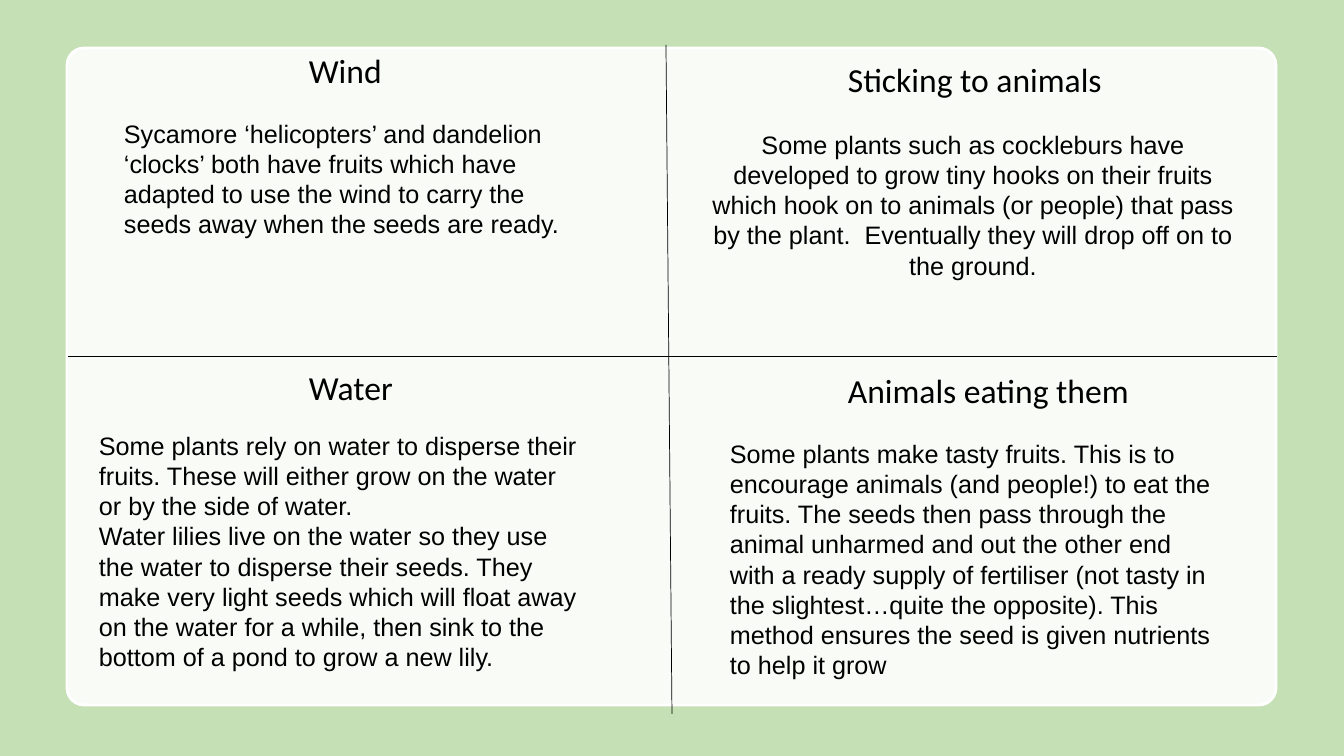
from lxml.etree import SubElement
from pptx import Presentation
from pptx.dml.color import RGBColor
from pptx.enum.shapes import MSO_CONNECTOR as Connector, MSO_SHAPE as Shape
from pptx.enum.text import MSO_AUTO_SIZE as AutoSize, PP_ALIGN as Align
from pptx.oxml.ns import qn
from pptx.util import Pt

HEADINGS = [
    ("Wind", (299, 45, 289, 50)),
    ("Sticking to animals", (838, 54, 439, 50)),
    ("Water", (299, 362, 184, 50)),
    ("Animals eating them", (838, 365, 337, 50)),
]
EXPLANATIONS = [
    (["Sycamore ‘helicopters’ and dandelion ‘clocks’ both have fruits which have adapted "
      "to use the wind to carry the seeds away when the seeds are ready."],
     (114, 113, 475, 132), Align.LEFT),
    (["Some plants such as cockleburs have developed to grow tiny hooks on their fruits "
      "which hook on to animals (or people) that pass by the plant.  Eventually they will "
      "drop off on to the ground."],
     (692, 124, 562, 163), Align.CENTER),
    (["Some plants rely on water to disperse their fruits. These will either grow on the "
      "water or by the side of water.",
      "Water lilies live on the water so they use the water to disperse their seeds. They "
      "make very light seeds which will float away on the water for a while, then sink to "
      "the bottom of a pond to grow a new lily."],
     (89, 425, 500, 262), Align.LEFT),
    (["Some plants make tasty fruits. This is to encourage animals (and people!) to eat the "
      "fruits. The seeds then pass through the animal unharmed and out the other end with a "
      "ready supply of fertiliser (not tasty in the slightest…quite the opposite). This "
      "method ensures the seed is given nutrients to help it grow"],
     (720, 433, 505, 254), Align.LEFT),
]
PANEL = (67, 48, 1209, 657)
DIVIDERS = [(666, 45, 672, 714), (68, 356, 1277, 356)]

GREEN = RGBColor(0xC5, 0xE0, 0xB4)
WHITE = RGBColor(0xFF, 0xFF, 0xFF)
BLACK = RGBColor(0x00, 0x00, 0x00)
WIDTH, HEIGHT = 1344, 756
SCALE = 12192000 / WIDTH


def emu(lengths):
    return [round(length * SCALE) for length in lengths]


def add_text(page, lines, frame, font_name, size, align=Align.LEFT):
    box = page.shapes.add_textbox(*emu(frame))
    text = box.text_frame
    text.word_wrap = True
    text.auto_size = AutoSize.SHAPE_TO_FIT_TEXT
    text.text = "\n".join(lines)
    for para in text.paragraphs:
        para.alignment = align
        para.font.name = font_name
        para.font.size = Pt(size)
        para.font.color.rgb = BLACK


def add_panel(page):
    panel = page.shapes.add_shape(Shape.ROUNDED_RECTANGLE, *emu(PANEL))
    panel.adjustments[0] = 0.026
    panel.shadow.inherit = False
    panel.fill.solid()
    panel.fill.fore_color.rgb = WHITE
    color = panel.fill._xPr.find(qn("a:solidFill"))[0]
    SubElement(color, qn("a:alpha"), val="90000")
    panel.line.color.rgb = WHITE
    panel.line.width = Pt(2)


def add_divider(page, ends):
    divider = page.shapes.add_connector(Connector.STRAIGHT, *emu(ends))
    divider.line.color.rgb = BLACK
    divider.line.width = Pt(0.5)
    SubElement(divider._element.spPr, qn("a:effectLst"))


def main():
    deck = Presentation()
    deck.slide_width, deck.slide_height = emu((WIDTH, HEIGHT))
    page = deck.slides.add_slide(deck.slide_layouts[6])
    page.background.fill.solid()
    page.background.fill.fore_color.rgb = GREEN
    add_panel(page)
    for heading, frame in HEADINGS:
        add_text(page, [heading], frame, "Calibri", 24)
    for lines, frame, align in EXPLANATIONS:
        add_text(page, lines, frame, "Arial", 18, align)
    for ends in DIVIDERS:
        add_divider(page, ends)
    deck.save("out.pptx")


if __name__ == "__main__":
    main()
